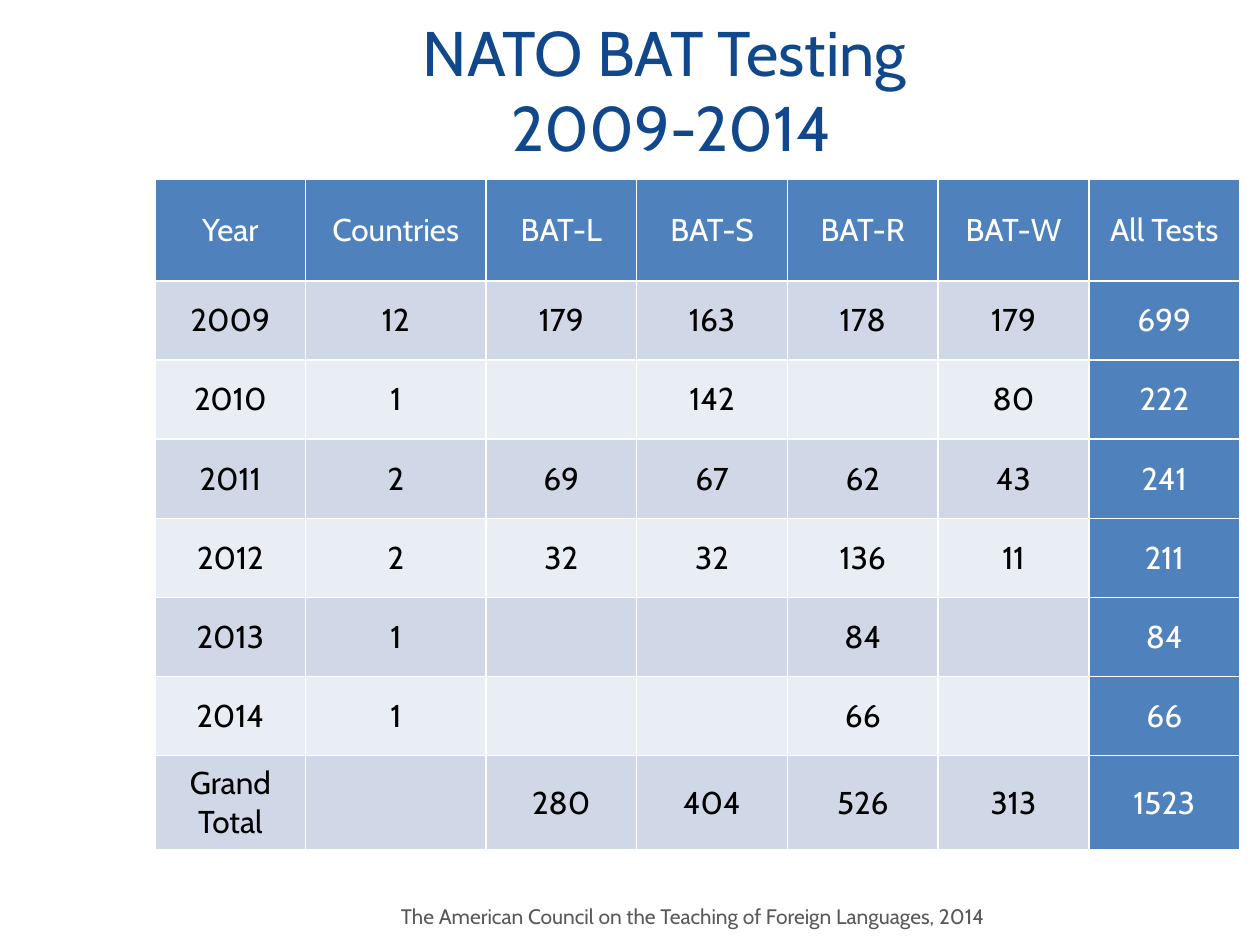
from lxml import etree
from pptx import Presentation
from pptx.dml.color import RGBColor
from pptx.enum.text import MSO_ANCHOR, MSO_AUTO_SIZE, PP_ALIGN
from pptx.oxml.ns import qn
from pptx.util import Inches, Pt

CENTER = PP_ALIGN.CENTER
MIDDLE, BOTTOM = MSO_ANCHOR.MIDDLE, MSO_ANCHOR.BOTTOM
NO_AUTOFIT = MSO_AUTO_SIZE.NONE

FONT = "Cabin"
NAVY = RGBColor(0x11, 0x48, 0x8B)
BLUE = RGBColor(0x4F, 0x81, 0xBD)
BAND_DARK = RGBColor(0xD0, 0xD8, 0xE8)
BAND_LIGHT = RGBColor(0xE9, 0xED, 0xF4)
WHITE = RGBColor(0xFF, 0xFF, 0xFF)
BLACK = RGBColor(0, 0, 0)
GRAY = RGBColor(0x59, 0x59, 0x59)

TABLE_WIDTH, TABLE_HEIGHT = 8.61, 5.33
COUNTRIES_WIDTH = 1.43
HEADER_HEIGHT, TOTAL_HEIGHT = 0.81, 0.75

RESULTS = [
    ["Year", "Countries", "BAT-L", "BAT-S", "BAT-R", "BAT-W", "All Tests"],
    ["2009", "12", "179", "163", "178", "179", "699"],
    ["2010", "1", "", "142", "", "80", "222"],
    ["2011", "2", "69", "67", "62", "43", "241"],
    ["2012", "2", "32", "32", "136", "11", "211"],
    ["2013", "1", "", "", "84", "", "84"],
    ["2014", "1", "", "", "66", "", "66"],
    ["Grand Total", "", "280", "404", "526", "313", "1523"],
]


def add_run(p, text, size, color):
    """Append a formatted run to a centred paragraph."""
    p.alignment = CENTER
    r = p.add_run()
    r.text = text
    r.font.name = FONT
    r.font.size = Pt(size)
    r.font.color.rgb = color


def set_title(slide, lines):
    """Place the title placeholder and fill it with broken lines."""
    title = slide.shapes.title
    title.left, title.top = Inches(1.08), Inches(0.08)
    title.width, title.height = Inches(8.5), Inches(1.25)
    tf = title.text_frame
    tf.auto_size = NO_AUTOFIT
    tf.vertical_anchor = MIDDLE
    p = tf.paragraphs[0]
    for i, line in enumerate(lines):
        if i:
            p.add_line_break()
        add_run(p, line, 36, NAVY)


def add_source_line(slide, text):
    """Add the centred source line at the foot of the slide."""
    box = slide.shapes.add_textbox(Inches(2), Inches(6.9), Inches(7), Inches(0.52))
    tf = box.text_frame
    tf.word_wrap = True
    tf.vertical_anchor = BOTTOM
    p = tf.paragraphs[0]
    p.line_spacing = 0.9
    add_run(p, text, 12, GRAY)


def set_borders(cell, color, width):
    """Draw a solid line on all four sides of a cell."""
    tc_pr = cell._tc.get_or_add_tcPr()
    for i, side in enumerate(("lnL", "lnR", "lnT", "lnB")):
        ln = etree.Element(qn(f"a:{side}"), w=str(Pt(width)))
        fill = etree.SubElement(ln, qn("a:solidFill"))
        etree.SubElement(fill, qn("a:srgbClr"), val=str(color))
        tc_pr.insert(i, ln)


def fill_cell(cell, text, fill, color):
    """Fill, border and label one table cell."""
    cell.fill.solid()
    cell.fill.fore_color.rgb = fill
    set_borders(cell, WHITE, 1)
    cell.vertical_anchor = MIDDLE
    p = cell.text_frame.paragraphs[0]
    p.font.size = Pt(18)
    if text:
        add_run(p, text, 18, color)


def add_results_table(slide, rows):
    """Add the banded table with a blue header row and last column."""
    n_rows, n_cols = len(rows), len(rows[0])
    table = slide.shapes.add_table(
        n_rows, n_cols, Inches(1.23), Inches(1.42),
        Inches(TABLE_WIDTH), Inches(TABLE_HEIGHT)).table
    for col in table.columns:
        col.width = Inches((TABLE_WIDTH - COUNTRIES_WIDTH) / (n_cols - 1))
    table.columns[1].width = Inches(COUNTRIES_WIDTH)
    year_height = (TABLE_HEIGHT - HEADER_HEIGHT - TOTAL_HEIGHT) / (n_rows - 2)
    for row in table.rows:
        row.height = Inches(year_height)
    table.rows[0].height = Inches(HEADER_HEIGHT)
    table.rows[n_rows - 1].height = Inches(TOTAL_HEIGHT)
    for i, values in enumerate(rows):
        band = BAND_DARK if i % 2 else BAND_LIGHT
        for j, text in enumerate(values):
            strong = i == 0 or j == n_cols - 1
            fill, color = (BLUE, WHITE) if strong else (band, BLACK)
            fill_cell(table.cell(i, j), text, fill, color)


def main():
    """Build the slide and save it."""
    prs = Presentation()
    prs.slide_width, prs.slide_height = Inches(10), Inches(7.5)
    slide = prs.slides.add_slide(prs.slide_layouts[5])
    add_source_line(
        slide, "The American Council on the Teaching of Foreign Languages, 2014")
    set_title(slide, ["NATO BAT Testing ", "2009-2014"])
    add_results_table(slide, RESULTS)
    prs.save("out.pptx")


if __name__ == "__main__":
    main()
